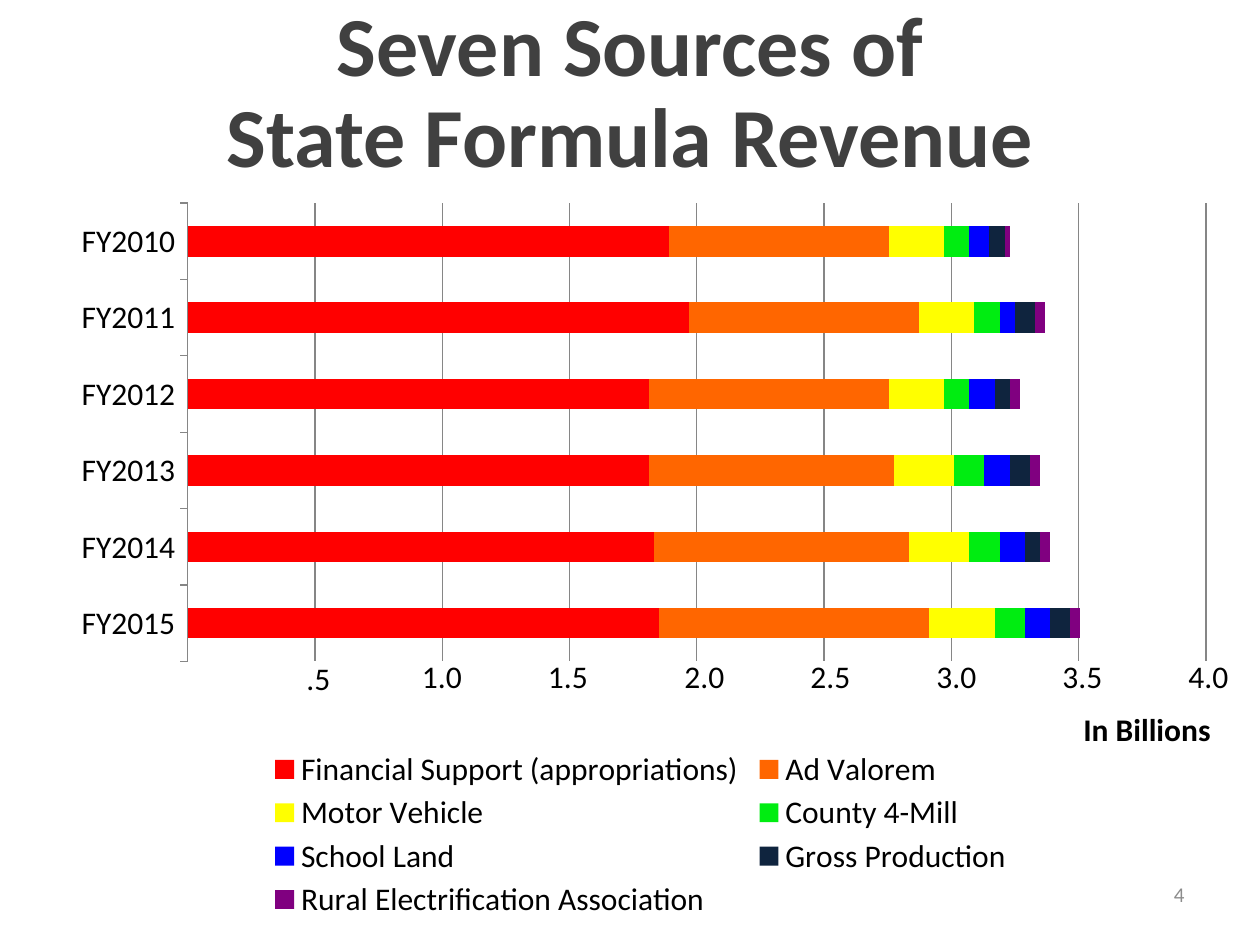
from lxml import etree
from pptx import Presentation
from pptx.chart.data import CategoryChartData
from pptx.dml.color import RGBColor
from pptx.enum.chart import XL_CHART_TYPE as ChartType, XL_LEGEND_POSITION as LegendPosition
from pptx.enum.chart import XL_TICK_MARK as TickMark
from pptx.enum.text import MSO_ANCHOR as Anchor, MSO_AUTO_SIZE as AutoSize, PP_ALIGN as Align
from pptx.oxml.ns import qn
from pptx.util import Pt


def color(value):
    return RGBColor.from_string(value)


def place_in_chart(element, index, target, x, y, width, height):
    for old in element.findall(qn("c:layout")):
        element.remove(old)
    layout = etree.Element(qn("c:layout"))
    manual = etree.SubElement(layout, qn("c:manualLayout"))
    settings = [("xMode", "edge"), ("yMode", "edge"),
                ("x", x), ("y", y), ("w", width), ("h", height)]
    if target:
        settings.insert(0, ("layoutTarget", target))
    for tag, value in settings:
        etree.SubElement(manual, qn("c:" + tag)).set("val", str(value))
    element.insert(index, layout)


deck = Presentation()
deck.slide_width, deck.slide_height = Pt(720), Pt(540)
page = deck.slides.add_slide(deck.slide_layouts[5])

title = page.shapes.title
title.left, title.top, title.width, title.height = Pt(0), Pt(0), Pt(720), Pt(108)
frame = title.text_frame
frame.auto_size = AutoSize.NONE
frame.vertical_anchor = Anchor.MIDDLE
for number, line in enumerate(["Seven Sources of", "State Formula Revenue"]):
    para = frame.add_paragraph() if number else frame.paragraphs[0]
    para.alignment = Align.CENTER
    para.line_spacing = 0.9
    para.space_before = Pt(0)
    span = para.add_run()
    span.text = line
    span.font.name, span.font.size, span.font.bold = "Calibri", Pt(48), True
    span.font.color.rgb = color("404040")

sources = [
    ("Financial Support (appropriations)", "FF0000", [94, 93, 92, 92, 100, 96]),
    ("Ad Valorem", "FF6600", [54, 51, 49, 48, 46, 44]),
    ("Motor Vehicle", "FFFF00", [13, 12, 12, 11, 11, 11]),
    ("County 4-Mill", "00ED11", [6, 6, 6, 5, 5, 5]),
    ("School Land", "0000FF", [5, 5, 5, 5, 3, 4]),
    ("Gross Production", "0F243E", [4, 3, 4, 3, 4, 3]),
    ("Rural Electrification Association", "800080", [2, 2, 2, 2, 2, 1]),
]
data = CategoryChartData(number_format="0")
data.categories = [f"FY{year}" for year in range(2015, 2009, -1)]
for name, fill, values in sources:
    data.add_series(name, values)
chart = page.shapes.add_chart(ChartType.BAR_STACKED, Pt(30), Pt(102), Pt(672), Pt(426), data).chart
chart.has_title = False
chart.font.name, chart.font.size = "Calibri", Pt(18)
chart.font.color.rgb = color("000000")

plot = chart.plots[0]
plot.gap_width, plot.overlap = 150, 100
plot.vary_by_categories = False
for series, (name, fill, values) in zip(plot.series, sources):
    series.format.fill.solid()
    series.format.fill.fore_color.rgb = color(fill)

years = chart.category_axis
years.major_tick_mark, years.minor_tick_mark = TickMark.OUTSIDE, TickMark.NONE
years.format.line.color.rgb = color("868686")
amounts = chart.value_axis
amounts.visible = False
amounts.minimum_scale, amounts.maximum_scale, amounts.major_unit = 0, 203.2, 25.4
amounts.has_major_gridlines = True
amounts.major_gridlines.format.line.color.rgb = color("868686")
amounts.tick_labels.number_format = '"$"#,##0.00'
amounts.tick_labels.number_format_is_linked = False

chart.has_legend = True
legend = chart.legend
legend.position = LegendPosition.BOTTOM
legend.include_in_layout = False
place_in_chart(chart._chartSpace.chart.plotArea, 0, "inner", 0.115, 0.033, 0.866, 0.615)
place_in_chart(legend._element, 1, None, 0.18, 0.76, 0.64, 0.24)

labels = [(".5", 168, 373, 28, False), ("In Billions", 612, 402, 88.5, True)]
lefts = [234, 306, 384, 456, 528, 600, 672]
labels += [(f"{1 + step / 2:.1f}", left, 372, 37.5, False) for step, left in enumerate(lefts)]
for text, left, top, width, bold in labels:
    box = page.shapes.add_textbox(Pt(left), Pt(top), Pt(width), Pt(29))
    box.text_frame.word_wrap = False
    box.text_frame.auto_size = AutoSize.SHAPE_TO_FIT_TEXT
    span = box.text_frame.paragraphs[0].add_run()
    span.text = text
    span.font.name, span.font.size, span.font.bold = "Calibri", Pt(18), bold
    span.font.color.rgb = color("000000")

page_number = page.shapes.add_textbox(Pt(516), Pt(492), Pt(168), Pt(37.5))
page_number.text_frame.word_wrap = True
page_number.text_frame.vertical_anchor = Anchor.MIDDLE
para = page_number.text_frame.paragraphs[0]
para.alignment = Align.RIGHT
span = para.add_run()
span.text = "4"
span.font.name, span.font.size = "Calibri", Pt(12)
span.font.color.rgb = color("8C8C8C")

deck.save("out.pptx")
